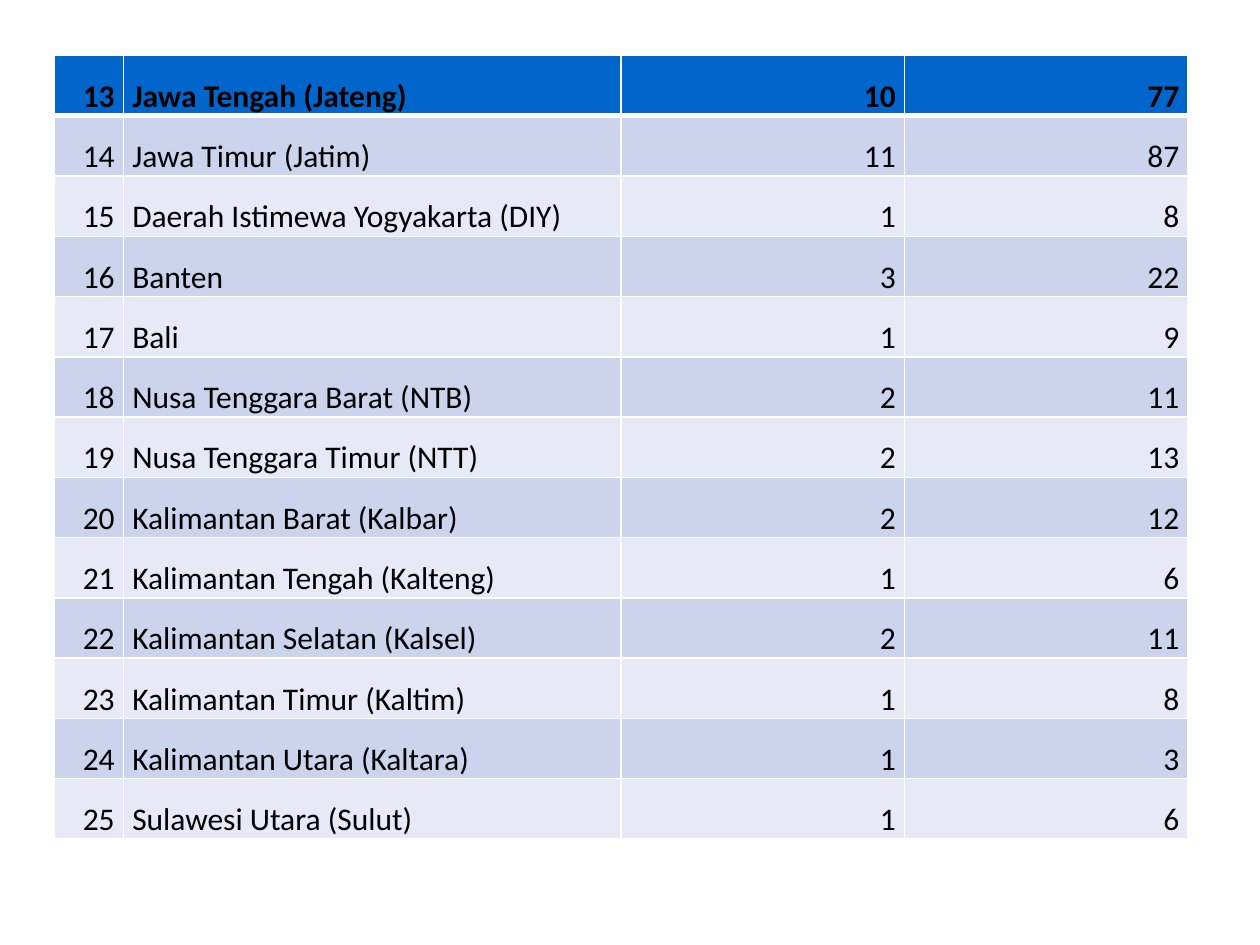
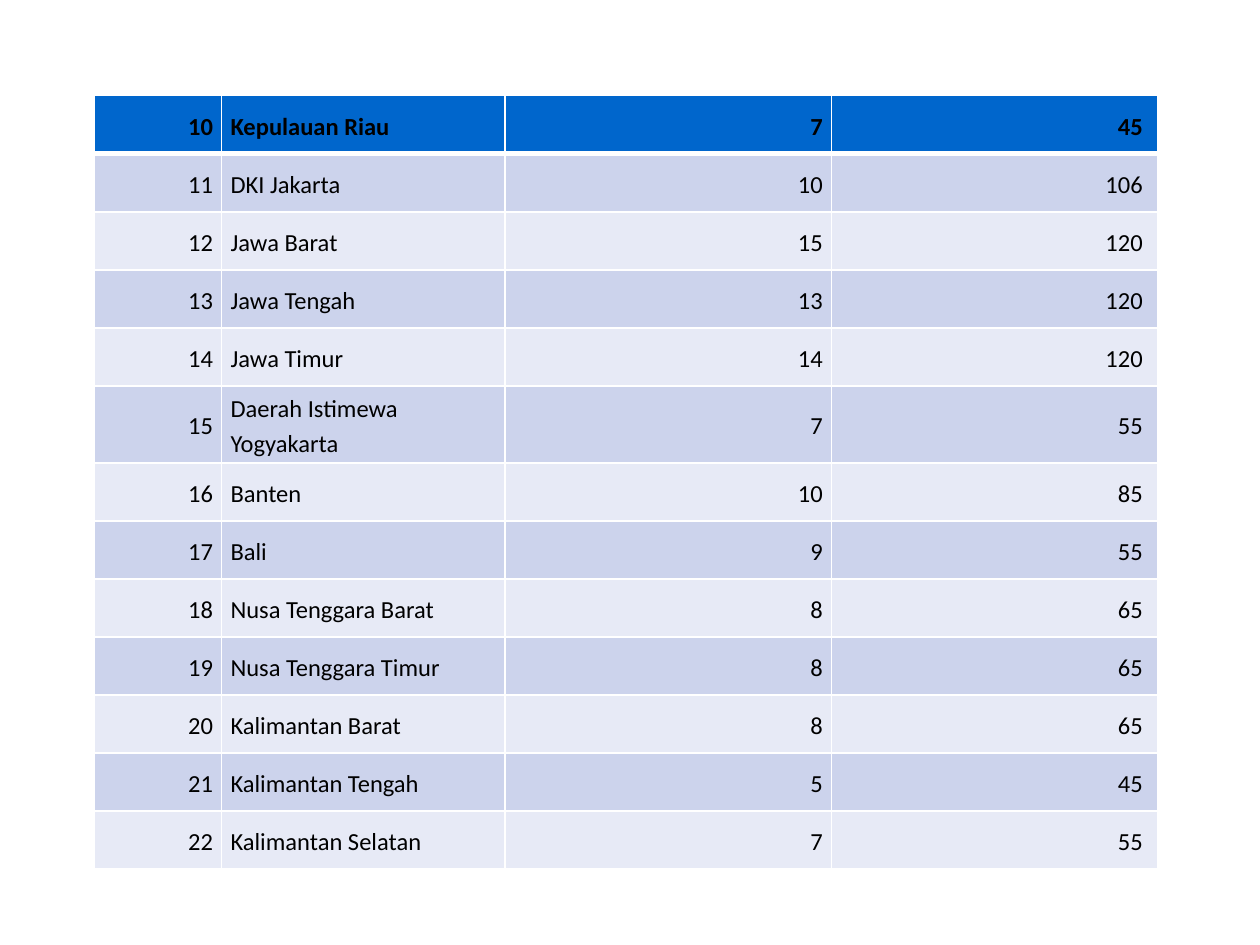
import pptx
import pptx.dml.color
import pptx.enum.text
import pptx.oxml
import pptx.oxml.ns
import pptx.util
from pptx.util import Inches

# Content: number, province, and two counts per row; the first row is the header band
TABLES = [
    {
        "rows": [
            (13, "Jawa Tengah (Jateng)", 10, 77),
            (14, "Jawa Timur (Jatim)", 11, 87),
            (15, "Daerah Istimewa Yogyakarta (DIY)", 1, 8),
            (16, "Banten", 3, 22),
            (17, "Bali", 1, 9),
            (18, "Nusa Tenggara Barat (NTB)", 2, 11),
            (19, "Nusa Tenggara Timur (NTT)", 2, 13),
            (20, "Kalimantan Barat (Kalbar)", 2, 12),
            (21, "Kalimantan Tengah (Kalteng)", 1, 6),
            (22, "Kalimantan Selatan (Kalsel)", 2, 11),
            (23, "Kalimantan Timur (Kaltim)", 1, 8),
            (24, "Kalimantan Utara (Kaltara)", 1, 3),
            (25, "Sulawesi Utara (Sulut)", 1, 6),
        ],
        "left": 0.43, "top": 0.44, "height": 6.22,
        "columns": (0.55, 3.95, 2.25, 2.25),
        "tall_rows": {},
        "size": "large", "anchor": "BOTTOM", "last_margin": 0.07,
    },
    {
        "rows": [
            (10, "Kepulauan Riau", 7, 45),
            (11, "DKI Jakarta", 10, 106),
            (12, "Jawa Barat", 15, 120),
            (13, "Jawa Tengah", 13, 120),
            (14, "Jawa Timur", 14, 120),
            (15, "Daerah Istimewa Yogyakarta", 7, 55),
            (16, "Banten", 10, 85),
            (17, "Bali", 9, 55),
            (18, "Nusa Tenggara Barat", 8, 65),
            (19, "Nusa Tenggara Timur", 8, 65),
            (20, "Kalimantan Barat", 8, 65),
            (21, "Kalimantan Tengah", 5, 45),
            (22, "Kalimantan Selatan", 7, 55),
        ],
        "left": 0.75, "top": 0.76, "height": 6.14,
        "columns": (1.01, 2.25, 2.59, 2.59),
        "tall_rows": {5: 0.61},
        "size": "small", "anchor": "MIDDLE", "last_margin": 0.12,
    },
]

# Shared look
THEME = {
    "font": "Calibri",
    "text": "000000",
    "header": "0066CC",
    "bands": ("E7EAF6", "CCD3EC"),
    "border": "FFFFFF",
    "border_width": 1,
    "header_rule": 3,
    "large": 18,
    "small": 14,
    "line_spacing": 1.15,
    "margin": 0.07,
}
NAME_COLUMN = 1


def color(value):
    return pptx.dml.color.RGBColor.from_string(value)


def write_text(frame, text, *, size, bold, align):
    paragraph = frame.paragraphs[0]
    paragraph.text = text
    paragraph.alignment = getattr(pptx.enum.text.PP_ALIGN, align)
    paragraph.line_spacing = THEME["line_spacing"]
    font = paragraph.runs[0].font
    font.name = THEME["font"]
    font.size = pptx.util.Pt(size)
    font.bold = bold
    font.color.rgb = color(THEME["text"])


def draw_borders(cell, row_index):
    """Thin lines all round, with a thick rule below the header row."""
    widths = dict.fromkeys("LRTB", THEME["border_width"])
    if row_index < 2:
        widths["B" if row_index == 0 else "T"] = THEME["header_rule"]
    properties = cell._tc.get_or_add_tcPr()
    for side, width in widths.items():
        properties.append(pptx.oxml.parse_xml(
            f'<a:ln{side} {pptx.oxml.ns.nsdecls("a")} w="{pptx.util.Pt(width)}">'
            f'<a:solidFill><a:srgbClr val="{THEME["border"]}"/></a:solidFill>'
            f'</a:ln{side}>'))


def format_cell(cell, row_index, margin_right, anchor):
    cell.margin_left = Inches(THEME["margin"])
    cell.margin_right = Inches(margin_right)
    cell.margin_top = cell.margin_bottom = 0
    cell.vertical_anchor = getattr(pptx.enum.text.MSO_ANCHOR, anchor)
    draw_borders(cell, row_index)
    cell.fill.solid()
    fill = THEME["bands"][row_index % 2] if row_index else THEME["header"]
    cell.fill.fore_color.rgb = color(fill)


def add_province_table(slide, data):
    rows, columns, tall_rows = data["rows"], data["columns"], data["tall_rows"]
    table = slide.shapes.add_table(
        len(rows), len(columns), Inches(data["left"]), Inches(data["top"]),
        Inches(sum(columns)), Inches(data["height"])).table
    for column, width in zip(table.columns, columns):
        column.width = Inches(width)

    # Rows share the height that the tall rows leave over
    plain_height = (data["height"] - sum(tall_rows.values())) / (len(rows) - len(tall_rows))
    for row_index, values in enumerate(rows):
        table.rows[row_index].height = Inches(tall_rows.get(row_index, plain_height))
        for column_index, value in enumerate(values):
            cell = table.cell(row_index, column_index)
            is_last = column_index == len(columns) - 1
            margin_right = data["last_margin"] if is_last else THEME["margin"]
            format_cell(cell, row_index, margin_right, data["anchor"])
            write_text(cell.text_frame, str(value), size=THEME[data["size"]],
                       bold=row_index == 0,
                       align="LEFT" if column_index == NAME_COLUMN else "RIGHT")


def main():
    presentation = pptx.Presentation()
    presentation.slide_width, presentation.slide_height = Inches(10), Inches(7.5)
    blank_layout = presentation.slide_layouts[6]
    for data in TABLES:
        add_province_table(presentation.slides.add_slide(blank_layout), data)
    presentation.save("out.pptx")


if __name__ == "__main__":
    main()
